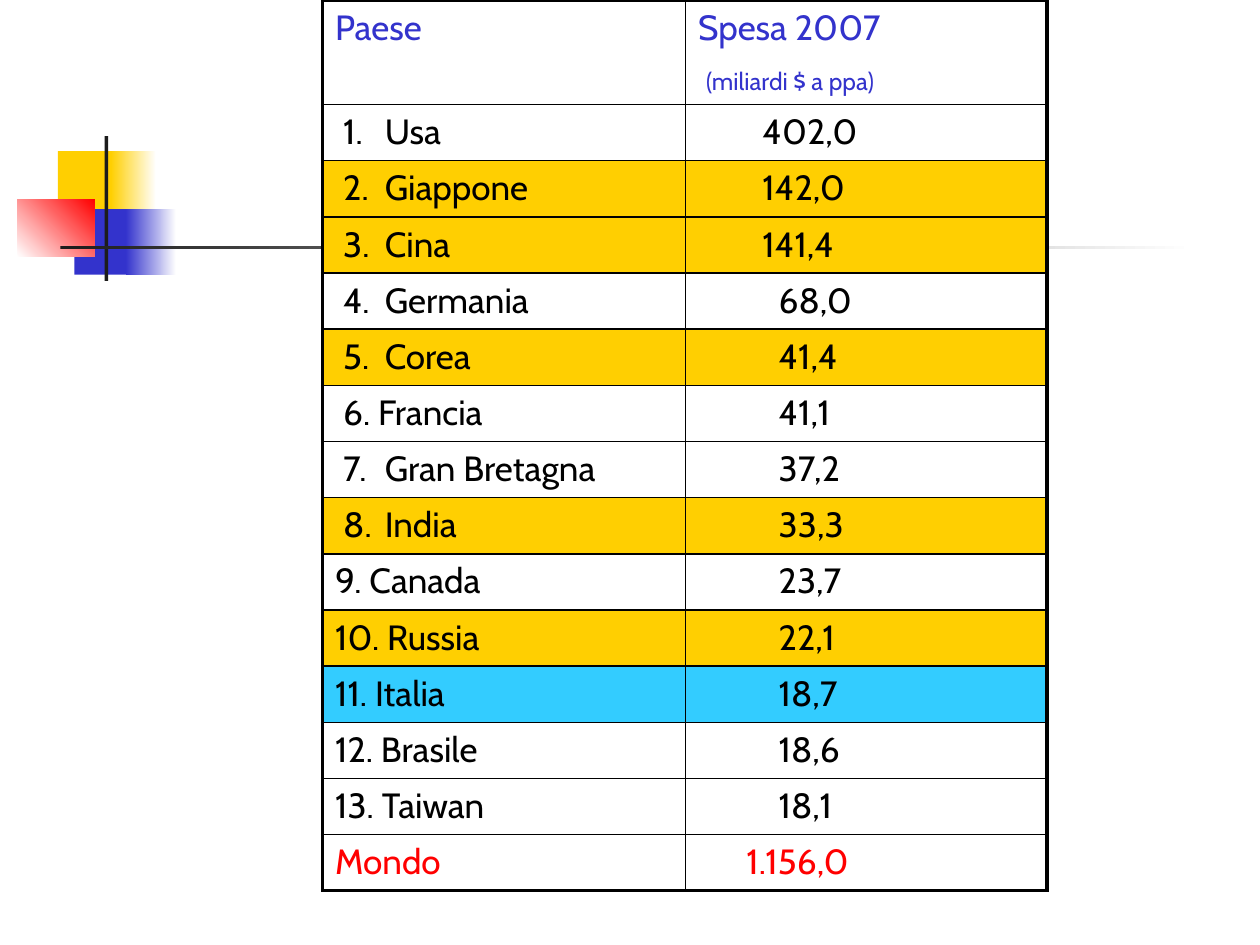
from dataclasses import dataclass

from lxml.etree import SubElement
from pptx import Presentation
from pptx.dml.color import RGBColor
from pptx.enum.shapes import MSO_SHAPE
from pptx.oxml.ns import qn
from pptx.util import Inches, Pt


@dataclass(frozen=True)
class Theme:
    font: str = "Cabin"
    body_size: int = 20
    note_size: int = 14
    thin: float = 1
    thick: float = 2.25
    yellow: str = "FFCF01"
    blue: str = "3333CC"
    red: str = "FF0000"
    cyan: str = "33CCFF"
    dark: str = "1C1C1C"
    black: str = "000000"
    white: str = "FFFFFF"


THEME = Theme()
GRID_COLUMNS, GRID_ROWS = 100, 75
SPACE = 0.64
HEADER_HEIGHT, ROW_HEIGHT = 8.3, 4.46

SPENDING = [
    ("1.\tUsa", "402,0", None),
    ("2.\tGiappone", "142,0", THEME.yellow),
    ("3.\tCina", "141,4", THEME.yellow),
    ("4.\tGermania", "68,0", None),
    ("5.\tCorea", "41,4", THEME.yellow),
    ("6. Francia", "41,1", None),
    ("7.\tGran Bretagna", "37,2", None),
    ("8.\tIndia", "33,3", THEME.yellow),
    ("9. Canada", "23,7", None),
    ("10. Russia", "22,1", THEME.yellow),
    ("11. Italia", "18,7", THEME.cyan),
    ("12. Brasile", "18,6", None),
    ("13. Taiwan", "18,1", None),
]
INDENTED_RANKS = 8


class SlideBuilder:
    def __init__(self, presentation, theme):
        self.theme = theme
        self.slide = presentation.slides.add_slide(presentation.slide_layouts[6])
        self.column = presentation.slide_width / GRID_COLUMNS
        self.row = presentation.slide_height / GRID_ROWS

    def box(self, left, top, width, height):
        return (round(left * self.column), round(top * self.row),
                round(width * self.column), round(height * self.row))

    def block(self, place, *colors, angle=0):
        shape = self.slide.shapes.add_shape(MSO_SHAPE.RECTANGLE, *self.box(*place))
        shape.shadow.inherit = False
        shape.line.fill.background()
        if len(colors) == 1:
            shape.fill.solid()
            shape.fill.fore_color.rgb = RGBColor.from_string(colors[0])
            return
        shape.fill.gradient()
        shape.fill.gradient_angle = angle
        for position, (stop, color) in enumerate(zip(shape.fill.gradient_stops, colors)):
            stop.position = position
            stop.color.rgb = RGBColor.from_string(color)

    def table(self, place, widths, heights):
        frame = self.slide.shapes.add_table(len(heights), len(widths), *self.box(*place))
        table = frame.table
        table.first_row = table.horz_banding = False
        for column, width in zip(table.columns, widths):
            column.width = round(width * self.column)
        for row, height in zip(table.rows, heights):
            row.height = round(height * self.row)
        last_row, last_column = len(heights) - 1, len(widths) - 1
        for r, row in enumerate(table.rows):
            for c, cell in enumerate(row.cells):
                self.borders(cell, L=c == 0, R=c == last_column, T=r == 0, B=r == last_row)
                cell.fill.background()
        return table

    def borders(self, cell, **outer_sides):
        properties = cell._tc.get_or_add_tcPr()
        for side, outer in outer_sides.items():
            width = self.theme.thick if outer else self.theme.thin
            line = SubElement(properties, qn(f"a:ln{side}"), w=str(Pt(width)))
            fill = SubElement(line, qn("a:solidFill"))
            SubElement(fill, qn("a:srgbClr"), val=self.theme.black)

    def text(self, paragraph, wording, color, size=None, left=0, hanging=0):
        paragraph.text = wording
        paragraph.font.name = self.theme.font
        paragraph.font.size = Pt(size or self.theme.body_size)
        paragraph.font.color.rgb = RGBColor.from_string(color)
        properties = paragraph._p.get_or_add_pPr()
        properties.set("marL", str(round((left + hanging) * self.column)))
        properties.set("indent", str(round(-hanging * self.column)))

    def cell(self, cell, wording, color, fill=None, left=0, hanging=0):
        self.text(cell.text_frame.paragraphs[0], wording, color, left=left, hanging=hanging)
        if fill:
            cell.fill.solid()
            cell.fill.fore_color.rgb = RGBColor.from_string(fill)

    def note(self, cell, wording, color, left):
        paragraph = cell.text_frame.add_paragraph()
        self.text(paragraph, wording, color, self.theme.note_size, left)
        paragraph.space_before = Pt(10)


def add_decoration(builder):
    theme = builder.theme
    builder.block((4.6, 12, 4.8, 5.2), theme.yellow)
    builder.block((8.8, 12, 3.6, 5.2), theme.yellow, theme.white)
    builder.block((5.9, 16.6, 4.6, 5.2), theme.blue)
    builder.block((10, 16.6, 4, 5.2), theme.blue, theme.white)
    builder.block((1.4, 15.8, 6.1, 4.6), theme.white, theme.red, angle=45)
    builder.block((8.3, 10.8, 0.3, 11.5), theme.dark)
    builder.block((4.8, 19.5, 90, 0.3), theme.dark, theme.white)


def add_spending_table(builder):
    theme = builder.theme
    heights = [HEADER_HEIGHT] + [ROW_HEIGHT] * (len(SPENDING) + 1)
    table = builder.table((25.6, 0, 57.5, sum(heights)), (28.8, 28.7), heights)
    builder.cell(table.cell(0, 0), "Paese", theme.blue)
    builder.cell(table.cell(0, 1), "Spesa 2007", theme.blue)
    builder.note(table.cell(0, 1), "(miliardi $ a ppa)", theme.blue, SPACE)

    for rank, (country, amount, fill) in enumerate(SPENDING, start=1):
        left = SPACE if rank <= INDENTED_RANKS else 0
        hanging = 3.3 if "\t" in country else 0
        amount_left = SPACE * (8 if len(amount) == 5 else 10)
        builder.cell(table.cell(rank, 0), country, theme.black, fill, left, hanging)
        builder.cell(table.cell(rank, 1), amount, theme.black, fill, amount_left)

    total = len(SPENDING) + 1
    builder.cell(table.cell(total, 0), "Mondo", theme.red)
    builder.cell(table.cell(total, 1), "1.156,0", theme.red, left=SPACE * 6)


def main():
    presentation = Presentation()
    presentation.slide_width = Inches(10)
    presentation.slide_height = Inches(7.5)
    builder = SlideBuilder(presentation, THEME)
    add_decoration(builder)
    add_spending_table(builder)
    presentation.save("out.pptx")


if __name__ == "__main__":
    main()
